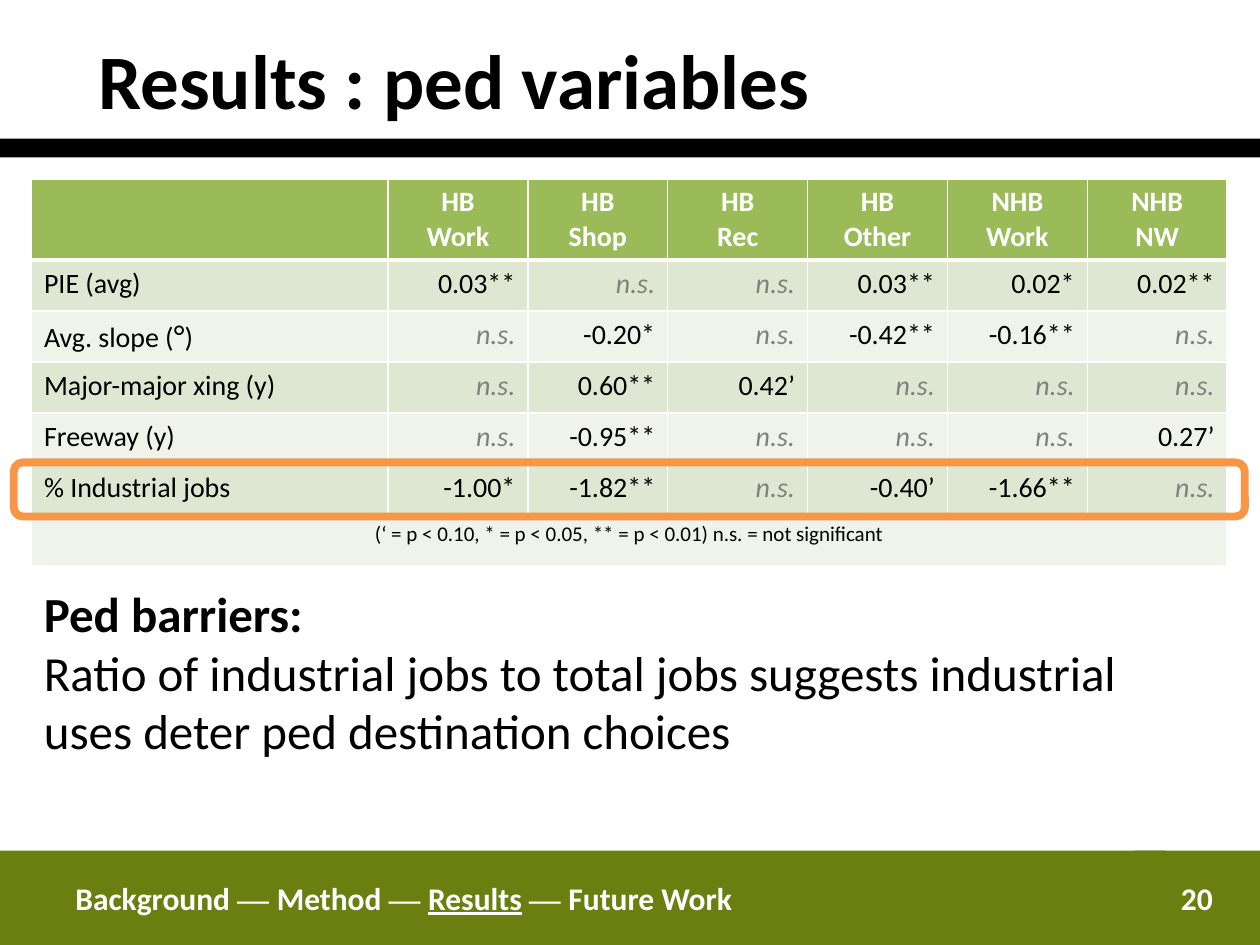
import pptx
import pptx.util
import pptx.dml.color
import pptx.enum.shapes
import pptx.enum.text
import pptx.oxml
from pptx.util import Inches

# Content
TITLE = "Results : ped variables"
HEADERS = ["", "HB\nWork", "HB\nShop", "HB\nRec", "HB\nOther", "NHB Work", "NHB\nNW"]
NS = "n.s."
VARIABLES = [
    ("PIE (avg)", "0.03**", NS, NS, "0.03**", "0.02*", "0.02**"),
    ("Avg. slope (°)", NS, "-0.20*", NS, "-0.42**", "-0.16**", NS),
    ("Major-major xing (y)", NS, "0.60**", "0.42’", NS, NS, NS),
    ("Freeway (y)", NS, "-0.95**", NS, NS, NS, "0.27’"),
    ("% Industrial jobs", "-1.00*", "-1.82**", NS, "-0.40’", "-1.66**", NS),
]
LEGEND = "(‘ = p < 0.10, * = p < 0.05, ** = p < 0.01) n.s. = not significant"
FINDING = [
    "Ped barriers:",
    "Ratio of industrial jobs to total jobs suggests industrial uses deter ped destination choices",
]
SECTIONS = ["Background", "Method", "Results", "Future Work"]
CURRENT_SECTION = "Results"
PAGE = "20"

THEME = {
    "font": "Calibri", "dash_font": "Times New Roman",
    "black": "000000", "white": "FFFFFF", "gray": "808080", "olive": "6A7F10",
    "header": "9BBB59", "bands": ("DEE7D1", "EFF3EA"), "highlight": "F79646",
    "title": 44, "finding": 28, "footer": 18, "degree": 18, "cell": 16, "legend": 12,
}
ALIGN = pptx.enum.text.PP_ALIGN
ANCHOR = pptx.enum.text.MSO_ANCHOR
SHAPE = pptx.enum.shapes.MSO_SHAPE


def rgb(name):
    return pptx.dml.color.RGBColor.from_string(THEME.get(name, name))


def style(run, size, color="black", bold=False, italic=False, font="font"):
    run.font.name = THEME[font]
    run.font.size = pptx.util.Pt(THEME[size])
    run.font.color.rgb = rgb(color)
    run.font.bold = bold
    run.font.italic = italic


def write(frame, text, align, size, **look):
    frame.text = text
    for paragraph in frame.paragraphs:
        paragraph.alignment = align
        for run in paragraph.runs:
            style(run, size, **look)


def add_bar(left, top, width, height, color):
    bar = slide.shapes.add_shape(
        SHAPE.RECTANGLE, Inches(left), Inches(top), Inches(width), Inches(height))
    bar.shadow.inherit = False
    bar.fill.solid()
    bar.fill.fore_color.rgb = rgb(color)
    bar.line.fill.background()
    bar.text_frame.vertical_anchor = ANCHOR.MIDDLE
    return bar


def paint_cell(cell, fill, bottom=1):
    properties = cell._tc.get_or_add_tcPr()
    for side, points in (("L", 1), ("R", 1), ("T", 1), ("B", bottom)):
        properties.append(pptx.oxml.parse_xml(
            '<a:ln%s xmlns:a="http://schemas.openxmlformats.org/drawingml/2006/main" w="%d">'
            '<a:solidFill><a:srgbClr val="%s"/></a:solidFill></a:ln%s>'
            % (side, pptx.util.Pt(points), THEME["white"], side)))
    cell.fill.solid()
    cell.fill.fore_color.rgb = rgb(fill)


presentation = pptx.Presentation()
presentation.slide_width, presentation.slide_height = Inches(10), Inches(7.5)
slide = presentation.slides.add_slide(presentation.slide_layouts[5])

# Title and rule
title = slide.shapes.title
title.left, title.top, title.width, title.height = (
    Inches(-0.01), Inches(0), Inches(7.09), Inches(1.25))
title.text_frame.auto_size = pptx.enum.text.MSO_AUTO_SIZE.NONE
title.text_frame.vertical_anchor = ANCHOR.MIDDLE
title.text_frame.margin_left = Inches(0.79)
write(title.text_frame, TITLE, ALIGN.LEFT, "title", bold=True)
add_bar(0, 1.1, 10, 0.15, "black")

# Footer
add_bar(0, 6.75, 0.5, 0.75, "olive")
page = add_bar(9, 6.75, 1, 0.75, "olive")
write(page.text_frame, PAGE, ALIGN.CENTER, "footer", color="white", bold=True)
breadcrumb = add_bar(0.5, 6.75, 8.75, 0.75, "olive").text_frame.paragraphs[0]
breadcrumb.alignment = ALIGN.LEFT
for index, section in enumerate(SECTIONS):
    parts = [(section, "font")]
    if index:
        parts = [(" ", "font"), ("— ", "dash_font")] + parts
    for text, font in parts:
        run = breadcrumb.add_run()
        run.text = text
        style(run, "footer", "white", bold=True, font=font)
        run.font.underline = text == CURRENT_SECTION

# Results table
row_count = len(VARIABLES) + 2
table_height, header_height = 3.07, 0.64
results = slide.shapes.add_table(
    row_count, len(HEADERS), Inches(0.25), Inches(1.42),
    Inches(9.5), Inches(table_height)).table
for index, column in enumerate(results.columns):
    column.width = Inches(1.11 if index else 2.83)
for index, row in enumerate(results.rows):
    row.height = Inches(
        (table_height - header_height) / (row_count - 1) if index else header_height)

for cell, heading in zip(results.rows[0].cells, HEADERS):
    write(cell.text_frame, heading, ALIGN.CENTER, "cell", color="white", bold=True)
    paint_cell(cell, "header", bottom=3)

for index, values in enumerate(VARIABLES):
    for column, value in enumerate(values):
        cell = results.cell(index + 1, column)
        weak = value == NS
        write(cell.text_frame, value, ALIGN.RIGHT if column else ALIGN.LEFT, "cell",
              color="gray" if weak else "black", italic=weak)
        paint_cell(cell, THEME["bands"][index % 2])
        if "°" in value:
            # The degree sign is set larger than its label
            label = cell.text_frame.paragraphs[0]
            before, after = value.split("°")
            label.runs[0].text = before
            for text, size in (("°", "degree"), (after, "cell")):
                run = label.add_run()
                run.text = text
                style(run, size)

legend = results.cell(row_count - 1, 0)
legend.merge(results.cell(row_count - 1, len(HEADERS) - 1))
write(legend.text_frame, LEGEND, ALIGN.CENTER, "legend")
for cell in results.rows[row_count - 1].cells:
    paint_cell(cell, THEME["bands"][1])

# Highlight around the industrial jobs row
highlight = slide.shapes.add_shape(
    SHAPE.ROUNDED_RECTANGLE, Inches(0.11), Inches(3.67), Inches(9.77), Inches(0.43))
highlight.shadow.inherit = False
highlight.fill.background()
highlight.line.color.rgb = rgb("highlight")
highlight.line.width = pptx.util.Pt(4.5)

# Finding
finding = slide.shapes.add_textbox(
    Inches(0.25), Inches(4.58), Inches(9.42), Inches(1.51)).text_frame
finding.word_wrap = True
write(finding, "\n".join(FINDING), ALIGN.LEFT, "finding")
finding.paragraphs[0].runs[0].font.bold = True

presentation.save("out.pptx")
